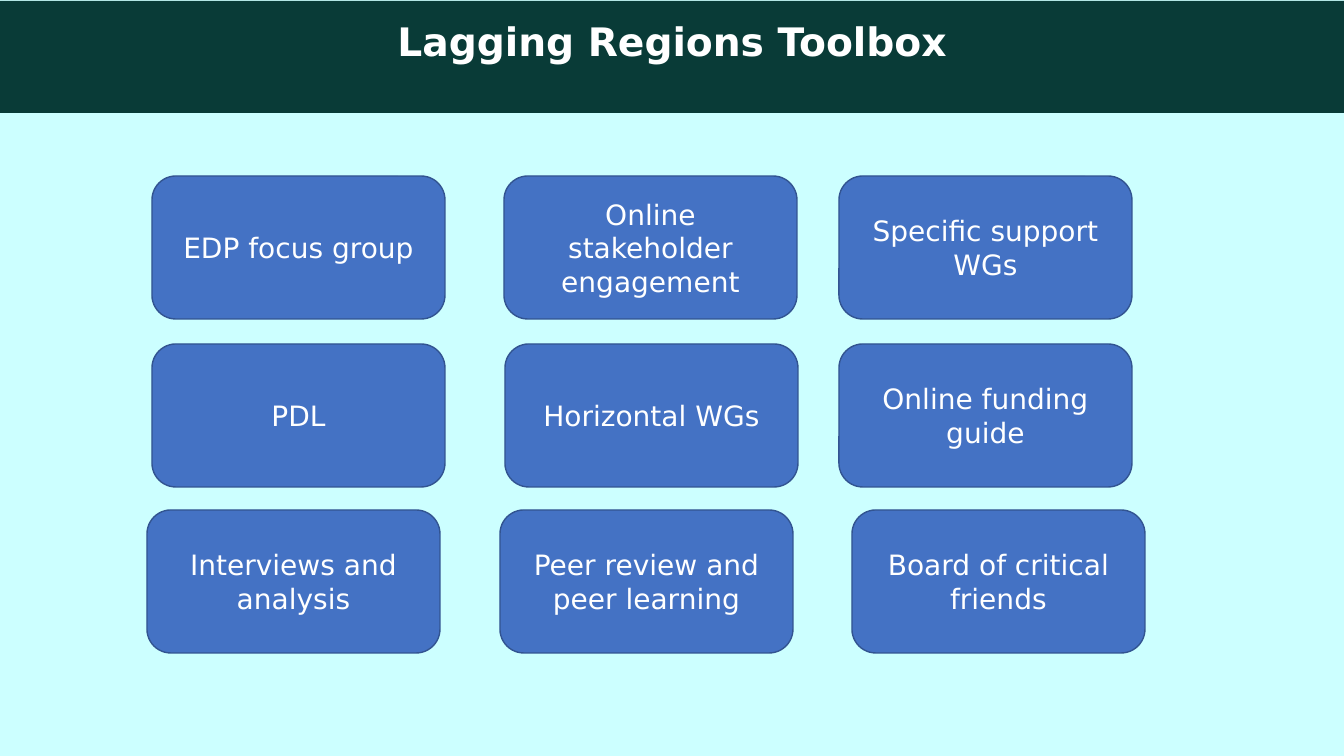
from dataclasses import dataclass

from pptx import Presentation
from pptx.dml.color import RGBColor
from pptx.enum.shapes import MSO_SHAPE
from pptx.enum.text import MSO_ANCHOR, MSO_AUTO_SIZE, PP_ALIGN
from pptx.util import Pt

TITLE = "Lagging Regions Toolbox"
# Each row: top, then (left, label) of its tools
ROWS = [
    (176, [(152, "EDP focus group"),
           (504, "Online stakeholder engagement"),
           (839, "Specific support WGs")]),
    (344, [(152, "PDL"),
           (505, "Horizontal WGs"),
           (839, "Online funding guide")]),
    (510, [(147, "Interviews and analysis"),
           (500, "Peer review and peer learning"),
           (852, "Board of critical friends")]),
]
WIDE, HIGH = 1344, 756
TOOL_W, TOOL_H = 293, 143
BAND = (0, 1, WIDE, 112)
TITLE_GAP = 16


@dataclass(frozen=True)
class Theme:
    font: str = "DejaVu Sans"
    back: RGBColor = RGBColor(0xCC, 0xFF, 0xFF)
    band: RGBColor = RGBColor(0x09, 0x3B, 0x37)
    tool: RGBColor = RGBColor(0x44, 0x72, 0xC4)
    edge: RGBColor = RGBColor(0x32, 0x54, 0x91)
    text: RGBColor = RGBColor(0xFF, 0xFF, 0xFF)
    title_size: int = 28
    tool_size: int = 20


THEME = Theme()


def px(n):
    return round(n * 914400 / 100.8)


def paint(item, color):
    item.fill.solid()
    item.fill.fore_color.rgb = color


def write(frame, text, size, bold, anchor):
    frame.word_wrap = True
    frame.auto_size = MSO_AUTO_SIZE.NONE
    frame.vertical_anchor = anchor
    para = frame.paragraphs[0]
    para.alignment = PP_ALIGN.CENTER
    run = para.add_run()
    run.text = text
    run.font.name = THEME.font
    run.font.size = Pt(size)
    run.font.bold = bold
    run.font.color.rgb = THEME.text


def add_title(slide):
    title = slide.shapes.title
    title.left, title.top, title.width, title.height = map(px, BAND)
    paint(title, THEME.band)
    frame = title.text_frame
    frame.margin_left = frame.margin_right = frame.margin_bottom = 0
    frame.margin_top = px(TITLE_GAP)
    write(frame, TITLE, THEME.title_size, True, MSO_ANCHOR.TOP)


def add_tool(slide, left, top, label):
    tool = slide.shapes.add_shape(
        MSO_SHAPE.ROUNDED_RECTANGLE, px(left), px(top), px(TOOL_W), px(TOOL_H))
    tool.shadow.inherit = False
    paint(tool, THEME.tool)
    tool.line.color.rgb = THEME.edge
    tool.line.width = Pt(1)
    write(tool.text_frame, label, THEME.tool_size, False, MSO_ANCHOR.MIDDLE)


def main():
    deck = Presentation()
    deck.slide_width, deck.slide_height = px(WIDE), px(HIGH)
    slide = deck.slides.add_slide(deck.slide_layouts[5])
    paint(slide.background, THEME.back)
    add_title(slide)
    for top, tools in ROWS:
        for left, label in tools:
            add_tool(slide, left, top, label)
    deck.save("out.pptx")


if __name__ == "__main__":
    main()
